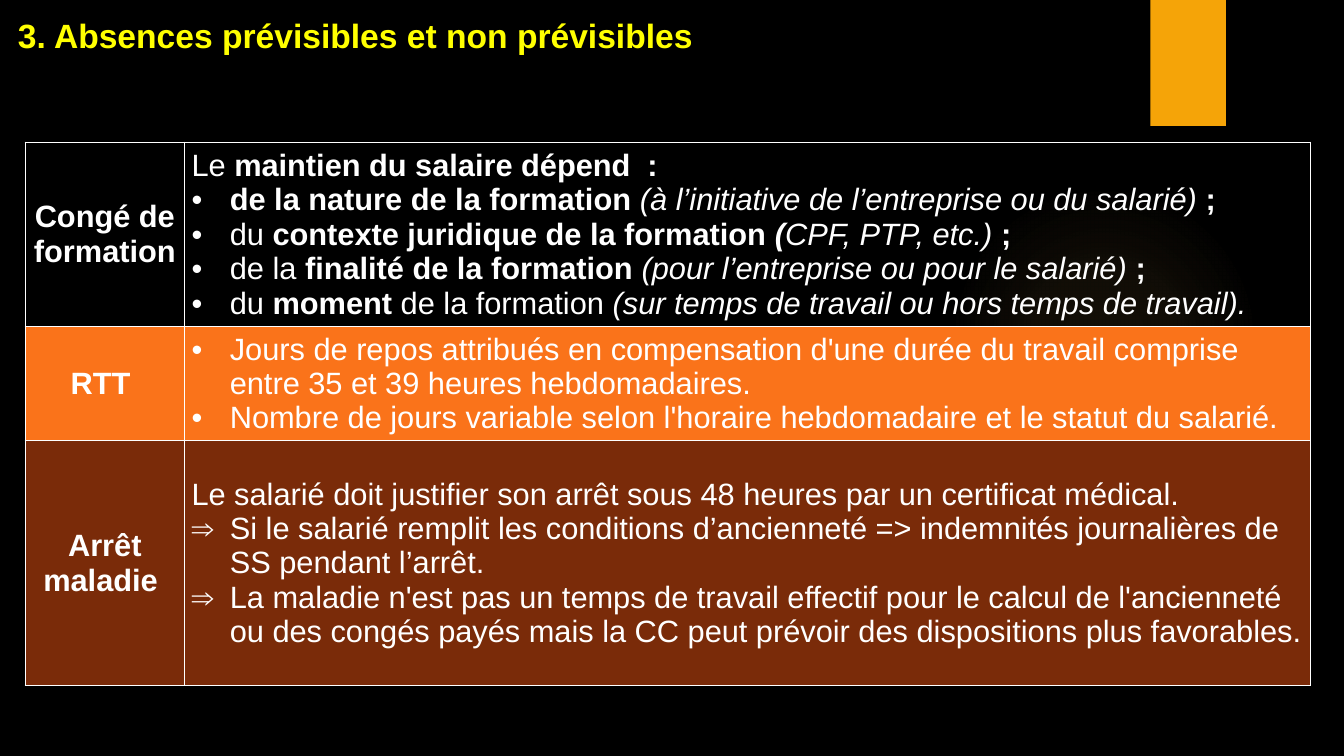
from collections import namedtuple
from dataclasses import dataclass

from lxml.etree import SubElement
from pptx import Presentation
from pptx.dml.color import RGBColor
from pptx.enum.shapes import MSO_SHAPE as Shape
from pptx.enum.text import MSO_ANCHOR as Anchor, PP_ALIGN as Align
from pptx.oxml.ns import qn
from pptx.util import Inches, Pt

Box = namedtuple("Box", "left top width height")
Line = namedtuple("Line", "spans bullet align", defaults=("", Align.LEFT))
Row = namedtuple("Row", "label space_before lines fill height")


@dataclass(frozen=True)
class Theme:
    """Colours, type sizes and spacing of the slide."""
    font: str = "Arial"
    background: str = "000000"
    title: str = "FFFF00"
    text: str = "FFFFFF"
    tab: str = "F5A408"
    glow: str = "FAC96A"
    orange: str = "FA731A"
    brown: str = "7A2B09"
    title_size: int = 24
    body_size: int = 22
    indent: float = 0.38
    cell_margin: float = 0.07


THEME = Theme()
PAGE = Box(0, 0, 13.33, 7.5)
LABEL_WIDTH = 1.58
GLOW_STOPS = ((0, 7), (36, 6), (69, 0))

ROWS = (
    Row("Congé de formation", 6, (
        Line((("Le ", ""), ("maintien du salaire dépend  :", "b")), "", Align.JUSTIFY),
        Line((("de la nature de la formation ", "b"),
              ("(à l’initiative de l’entreprise ou du salarié)", "i"),
              (" ; ", "b")), "•", Align.JUSTIFY),
        Line((("du ", ""), ("contexte juridique de la formation ", "b"), ("(", "bi"),
              ("CPF, PTP, etc.) ", "i"), ("; ", "b")), "•", Align.JUSTIFY),
        Line((("de la ", ""), ("finalité de la formation ", "b"),
              ("(pour l’entreprise ou pour le salarié) ", "i"), (";", "b")), "•"),
        Line((("du", ""), (" moment ", "b"), ("de la formation ", ""),
              ("(sur temps de travail ou hors temps de travail).", "i")), "•"),
    ), None, 1.74),
    Row("RTT ", 6, (
        Line((("Jours de repos attribués en compensation d'une durée du travail comprise "
               "entre 35 et 39 heures hebdomadaires.", ""),), "•"),
        Line((("Nombre de jours variable selon l'horaire hebdomadaire et le statut "
               "du salarié.", ""),), "•"),
    ), THEME.orange, 1.13),
    Row("Arrêt maladie ", 0, (
        Line((("Le salarié doit justifier son arrêt sous 48 heures par un certificat "
               "médical. ", ""),), "", Align.JUSTIFY),
        Line((("Si le salarié remplit les conditions d’ancienneté => indemnités "
               "journalières de SS pendant l’arrêt.", ""),), "⇒"),
        Line((("La maladie n'est pas un temps de travail effectif pour le calcul de "
               "l'ancienneté ou des congés payés mais la CC peut prévoir des dispositions "
               "plus favorables.", ""),), "⇒"),
    ), THEME.brown, 2.43),
)


def inches(box):
    """Return the four lengths of a box in slide units."""
    return [Inches(length) for length in box]


def paint(fill, colour):
    """Fill with a solid colour, or with nothing."""
    if colour is None:
        fill.background()
    else:
        fill.solid()
        fill.fore_color.rgb = RGBColor.from_string(colour)


def write(para, text, size=THEME.body_size, colour=THEME.text, bold=False, italic=False):
    """Add one formatted span to a paragraph."""
    span = para.add_run()
    span.text = text
    font = span.font
    font.name, font.size, font.bold, font.italic = THEME.font, Pt(size), bold, italic
    font.color.rgb = RGBColor.from_string(colour)


def add_bullet(para, mark):
    """Give a paragraph a hanging bullet."""
    properties = para._p.get_or_add_pPr()
    properties.set("marL", str(Inches(THEME.indent)))
    properties.set("indent", str(-Inches(THEME.indent)))
    SubElement(properties, qn("a:buFont"), typeface=THEME.font)
    SubElement(properties, qn("a:buChar"), char=mark)


def add_plain_shape(slide, kind, box, colour):
    """Add a shape without outline or shadow."""
    shape = slide.shapes.add_shape(kind, *inches(box))
    shape.shadow.inherit = False
    shape.line.fill.background()
    paint(shape.fill, colour)
    return shape


def add_backdrop(slide, box):
    """Draw the dark ground, the soft glow and the top tab."""
    paint(slide.background.fill, THEME.background)
    glow = add_plain_shape(slide, Shape.OVAL, Box(box.left + 9.41, box.top + 1.83, 3.08, 3.08), THEME.glow)
    glow.fill.gradient()
    gradient = glow._element.spPr.find(qn("a:gradFill"))
    for child in list(gradient):
        gradient.remove(child)
    stops = SubElement(gradient, qn("a:gsLst"))
    for position, opacity in GLOW_STOPS:
        stop = SubElement(stops, qn("a:gs"), pos=str(position * 1000))
        colour = SubElement(stop, qn("a:srgbClr"), val=THEME.glow)
        SubElement(colour, qn("a:alpha"), val=str(opacity * 1000))
    centre = SubElement(gradient, qn("a:path"), path="circle")
    SubElement(centre, qn("a:fillToRect"), l="50000", t="50000", r="50000", b="50000")
    add_plain_shape(slide, Shape.RECTANGLE, Box(box.left + 11.41, box.top, 0.75, 1.25), THEME.tab)


def add_title(slide, box, text):
    """Place the heading at the bottom of its box."""
    frame = slide.shapes.add_textbox(*inches(box)).text_frame
    frame.word_wrap = True
    frame.vertical_anchor = Anchor.BOTTOM
    write(frame.paragraphs[0], text, size=THEME.title_size, colour=THEME.title, bold=True)


def format_cell(cell, colour):
    """Set the borders, margins, anchor and fill of a cell."""
    properties = cell._tc.get_or_add_tcPr()
    for side in ("lnL", "lnR", "lnT", "lnB"):
        border = SubElement(properties, qn(f"a:{side}"), w=str(Pt(1)))
        SubElement(SubElement(border, qn("a:solidFill")), qn("a:srgbClr"), val=THEME.text)
    cell.margin_left = cell.margin_right = Inches(THEME.cell_margin)
    cell.margin_top = cell.margin_bottom = 0
    cell.vertical_anchor = Anchor.MIDDLE
    paint(cell.fill, colour)


def add_absence_table(slide, box, rows):
    """Build the table with one row per kind of absence."""
    table = slide.shapes.add_table(len(rows), 2, *inches(box)).table
    table.first_row = table.horz_banding = False
    for column, width in zip(table.columns, (LABEL_WIDTH, box.width - LABEL_WIDTH)):
        column.width = Inches(width)
    for index, row in enumerate(rows):
        table.rows[index].height = Inches(row.height)
        label, details = table.cell(index, 0), table.cell(index, 1)
        for cell in (label, details):
            format_cell(cell, row.fill)
        heading = label.text_frame.paragraphs[0]
        heading.alignment = Align.CENTER
        if row.space_before:
            heading.space_before = Pt(row.space_before)
        write(heading, row.label, bold=True)
        frame = details.text_frame
        for number, line in enumerate(row.lines):
            para = frame.add_paragraph() if number else frame.paragraphs[0]
            para.alignment = line.align
            if line.bullet:
                add_bullet(para, line.bullet)
            for text, style in line.spans:
                write(para, text, bold="b" in style, italic="i" in style)


def main():
    """Build and save the deck."""
    deck = Presentation()
    deck.slide_width, deck.slide_height = Inches(PAGE.width), Inches(PAGE.height)
    slide = deck.slides.add_slide(deck.slide_layouts[6])
    add_backdrop(slide, PAGE)
    add_title(slide, Box(0.08, 0.13, 11.23, 0.47), "3. Absences prévisibles et non prévisibles")
    add_absence_table(slide, Box(0.25, 1.41, 12.75, sum(row.height for row in ROWS)), ROWS)
    deck.save("out.pptx")


if __name__ == "__main__":
    main()
